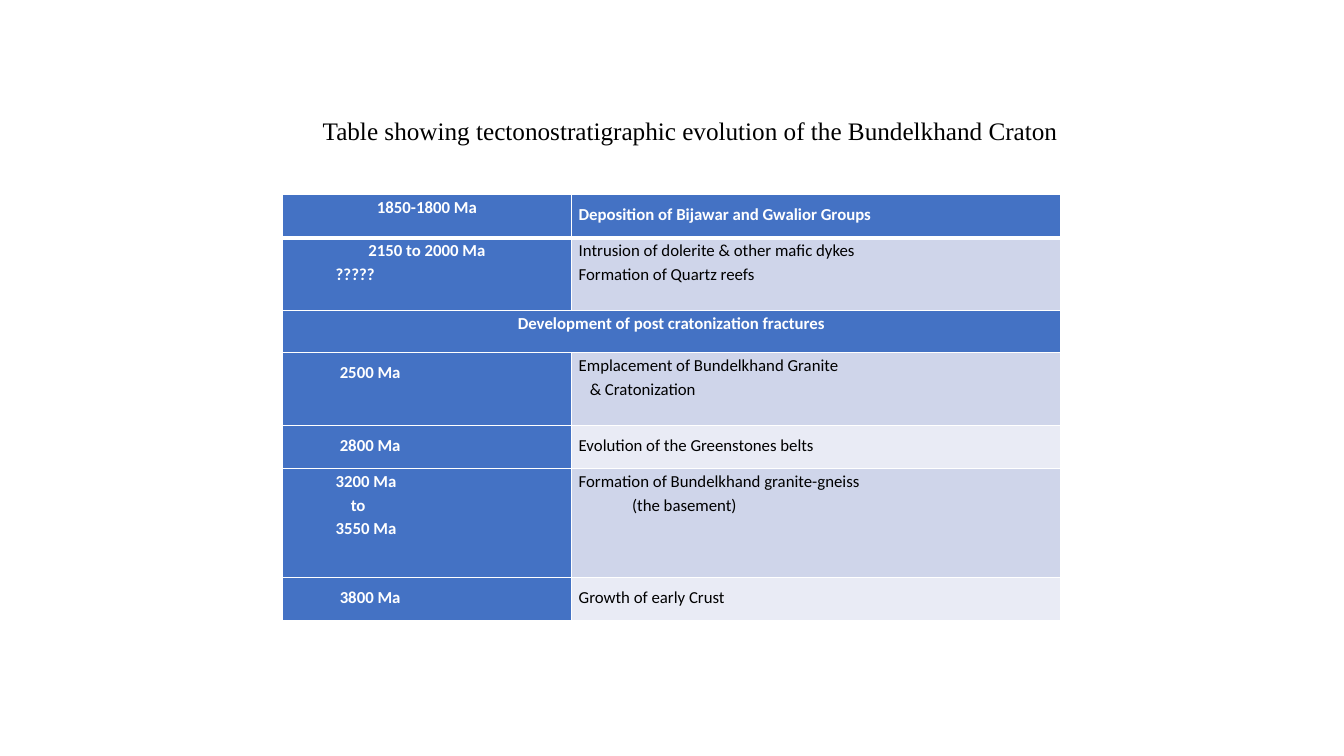
from lxml.etree import SubElement
from pptx import Presentation
from pptx.dml.color import RGBColor
from pptx.enum.text import MSO_ANCHOR, MSO_AUTO_SIZE, PP_ALIGN
from pptx.oxml.ns import qn
from pptx.util import Inches, Pt

BLUE = RGBColor(0x44, 0x72, 0xC4)
MIST = RGBColor(0xCF, 0xD5, 0xEA)
PALE = RGBColor(0xE9, 0xEB, 0xF5)
WHITE = RGBColor(0xFF, 0xFF, 0xFF)
BLACK = RGBColor(0, 0, 0)
LEFT, MID, JUST = PP_ALIGN.LEFT, PP_ALIGN.CENTER, PP_ALIGN.JUSTIFY

TITLE = "Table showing tectonostratigraphic evolution of the Bundelkhand Craton"
WIDTHS = (2.87, 4.85)
# Height, fill of the event cell, age lines, event lines.
# Each line: text, alignment, indent in inches, line spacing.
ROWS = [
    (0.43, BLUE, [("1850-1800 Ma", MID, 0, 1.15)],
     [("Deposition of Bijawar and Gwalior Groups", JUST, 0, 1.5)]),
    (0.72, MIST, [("2150 to 2000 Ma", MID, 0, 1.15),
                  ("?????", LEFT, 0.46, 1.15)],
     [("Intrusion of dolerite & other mafic dykes", JUST, 0, 1.15),
      ("Formation of Quartz reefs", JUST, 0, 1.15)]),
    (0.42, BLUE, [("Development of post cratonization fractures", MID, 0, 1.15)],
     None),
    (0.72, MIST, [("2500 Ma", JUST, 0.5, 1.5)],
     [("Emplacement of Bundelkhand Granite", JUST, 0, 1.15),
      ("& Cratonization", JUST, 0.11, 1.15)]),
    (0.43, PALE, [("2800 Ma", JUST, 0.5, 1.5)],
     [("Evolution of the Greenstones belts", JUST, 0, 1.5)]),
    (1.08, MIST, [("3200 Ma", JUST, 0.46, 1.15),
                  ("to", JUST, 0.61, 1.15),
                  ("3550 Ma", JUST, 0.46, 1.15)],
     [("Formation of Bundelkhand granite-gneiss", JUST, 0, 1.15),
      ("(the basement)", JUST, 0.53, 1.15)]),
    (0.43, PALE, [("3800 Ma", JUST, 0.5, 1.5)],
     [("Growth of early Crust", JUST, 0, 1.5)]),
]


def write(para, text, size=12, face="Calibri", color=BLACK, bold=False,
          align=LEFT, indent=0, space=1.0):
    para.text = text
    para.alignment = align
    para.line_spacing = space
    if indent:
        para._p.get_or_add_pPr().set("marL", str(Inches(indent)))
    font = para.runs[0].font
    font.size, font.name, font.bold = Pt(size), face, bold
    font.color.rgb = color


def edge(cell, base):
    """Draw white cell borders, with the bottom one base points wide."""
    props = cell._tc.get_or_add_tcPr()
    for side, width in (("L", 1), ("R", 1), ("T", 1), ("B", base)):
        line = SubElement(props, qn(f"a:ln{side}"), w=str(Pt(width)))
        fill = SubElement(line, qn("a:solidFill"))
        SubElement(fill, qn("a:srgbClr"), val=str(WHITE))


def fill_cell(cell, lines, color):
    cell.fill.solid()
    cell.fill.fore_color.rgb = color
    cell.margin_left = cell.margin_right = Inches(0.07)
    cell.margin_top = cell.margin_bottom = 0
    cell.vertical_anchor = MSO_ANCHOR.TOP
    frame = cell.text_frame
    for i, (text, align, indent, space) in enumerate(lines):
        para = frame.add_paragraph() if i else frame.paragraphs[0]
        write(para, text, color=WHITE if color == BLUE else BLACK,
              bold=color == BLUE, align=align, indent=indent, space=space)


def main():
    deck = Presentation()
    deck.slide_width, deck.slide_height = Inches(13.33), Inches(7.5)
    slide = deck.slides.add_slide(deck.slide_layouts[5])

    title = slide.shapes.title
    title.left, title.top = Inches(3.1), Inches(1.09)
    title.width, title.height = Inches(8.4), Inches(0.4)
    frame = title.text_frame
    frame.auto_size = MSO_AUTO_SIZE.NONE
    frame.vertical_anchor = MSO_ANCHOR.TOP
    write(frame.paragraphs[0], TITLE, size=18, face="Times New Roman")

    high = sum(row[0] for row in ROWS)
    table = slide.shapes.add_table(
        len(ROWS), len(WIDTHS), Inches(2.8), Inches(1.93),
        Inches(sum(WIDTHS)), Inches(high)).table
    for col, width in zip(table.columns, WIDTHS):
        col.width = Inches(width)
    for r, (height, color, ages, events) in enumerate(ROWS):
        table.rows[r].height = Inches(height)
        age, event = table.cell(r, 0), table.cell(r, 1)
        for cell in (age, event):
            edge(cell, 1 if r else 3)
        fill_cell(age, ages, BLUE)
        fill_cell(event, events or [], color)
        if events is None:
            age.merge(event)

    deck.save("out.pptx")


if __name__ == "__main__":
    main()
